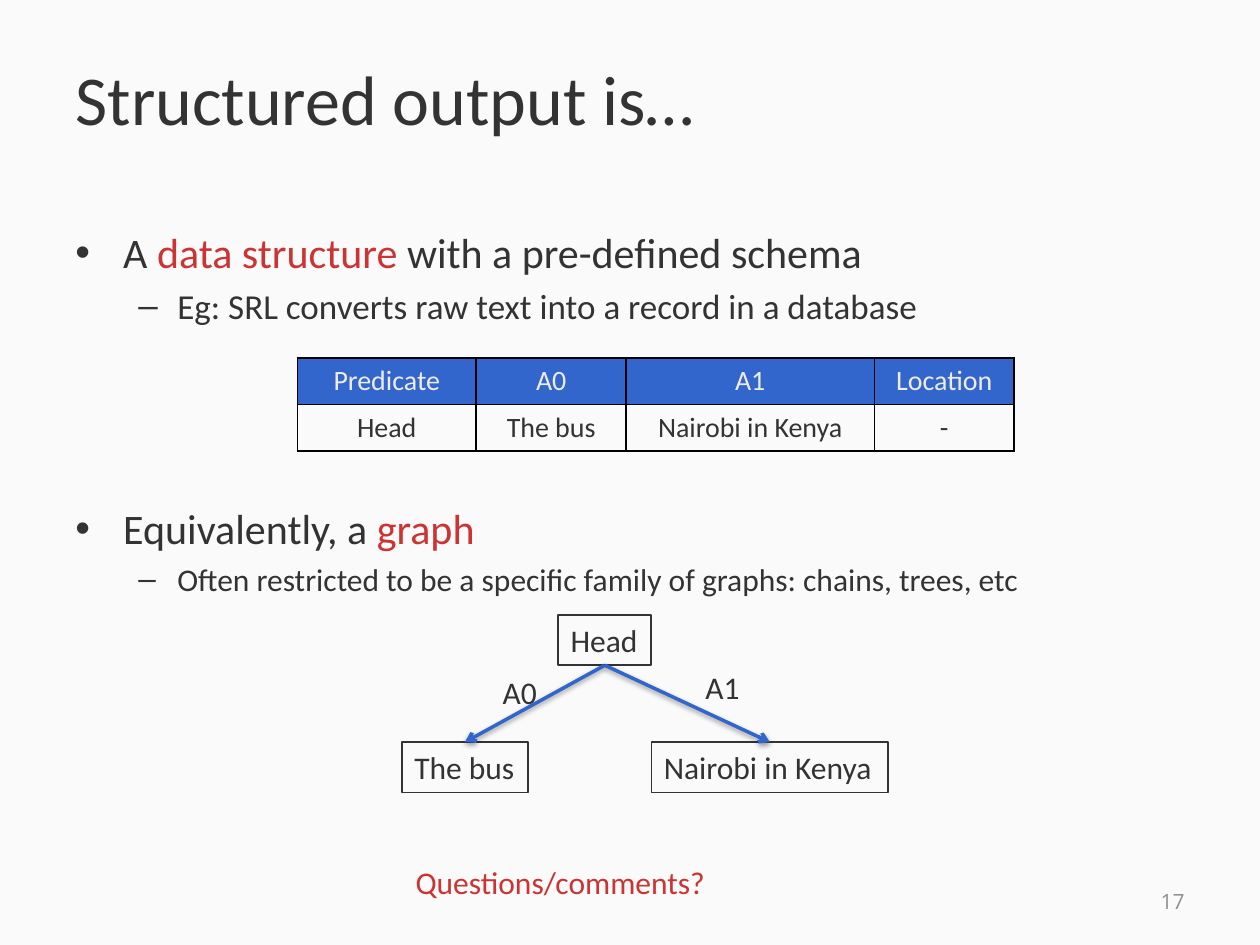
from lxml import etree
from pptx import Presentation, util as u
from pptx.dml import color
from pptx.enum import shapes, text
from pptx.oxml import parse_xml
from pptx.oxml.ns import nsdecls, qn

INK, RED, BLUE, PAPER = "333333", "CC3333", "3366CC", "FAFAFA"
LEFT, MID, RIGHT = text.PP_ALIGN.LEFT, text.PP_ALIGN.CENTER, text.PP_ALIGN.RIGHT


def rgb(code):
    return color.RGBColor.from_string(code)


def write(para, words, size=18, tint=INK, font="Calibri", align=LEFT):
    """Add one run to a paragraph and format it."""
    para.alignment = align
    run = para.add_run()
    run.text = words
    run.font.size = u.Pt(size)
    run.font.name = font
    run.font.bold = False
    run.font.color.rgb = rgb(tint)


class Deck:
    """Holds the style and the current slide."""

    def __init__(self, wide, high):
        self.show = Presentation()
        self.show.slide_width = u.Inches(wide)
        self.show.slide_height = u.Inches(high)
        self.slide = self.show.slides.add_slide(self.show.slide_layouts[5])
        back = self.slide.background.fill
        back.solid()
        back.fore_color.rgb = rgb(PAPER)

    def title(self, words, *area):
        hold = self.slide.shapes.title
        hold.left, hold.top, hold.width, hold.height = map(u.Inches, area)
        hold.text_frame.vertical_anchor = text.MSO_ANCHOR.MIDDLE
        write(hold.text_frame.paragraphs[0], words, size=40)

    def label(self, words, *area, wrap=False, anchor=text.MSO_ANCHOR.TOP, **form):
        frame = self.slide.shapes.add_textbox(*map(u.Inches, area)).text_frame
        frame.word_wrap = wrap
        frame.vertical_anchor = anchor
        write(frame.paragraphs[0], words, **form)

    def bullets(self, items, *area):
        """Each item: level, size, space before, and (words, tint) parts."""
        frame = self.slide.shapes.add_textbox(*map(u.Inches, area)).text_frame
        frame.word_wrap = True
        for num, (level, size, space, parts) in enumerate(items):
            para = frame.add_paragraph() if num else frame.paragraphs[0]
            para.level = level
            para.space_before = u.Pt(space)
            for words, tint in parts:
                write(para, words, size=size, tint=tint)
            mark, left, hang = [("•", 0.38, 0.38), ("–", 0.81, 0.31)][level]
            props = para._p.get_or_add_pPr()
            props.set("marL", str(u.Inches(left)))
            props.set("indent", str(-u.Inches(hang)))
            etree.SubElement(props, qn("a:buFont"), typeface="Arial")
            etree.SubElement(props, qn("a:buChar"), char=mark)

    def table(self, rows, cols, left, top, high):
        grid = self.slide.shapes.add_table(
            len(rows), len(cols), u.Inches(left), u.Inches(top),
            u.Inches(sum(cols)), u.Inches(high * len(rows))).table
        grid.first_row = grid.horz_banding = False
        for col, wide in zip(grid.columns, cols):
            col.width = u.Inches(wide)
        for r, row in enumerate(rows):
            for c, words in enumerate(row):
                cell = grid.cell(r, c)
                write(cell.text_frame.paragraphs[0], words, size=16,
                      tint=INK if r else "EEECE1", align=MID)
                self.border(cell)
                if r:
                    cell.fill.background()
                else:
                    cell.fill.solid()
                    cell.fill.fore_color.rgb = rgb(BLUE)

    def border(self, cell):
        props = cell._tc.get_or_add_tcPr()
        for side in "LRTB":
            props.append(parse_xml(
                f'<a:ln{side} {nsdecls("a")} w="12700"><a:solidFill>'
                f'<a:srgbClr val="000000"/></a:solidFill></a:ln{side}>'))

    def node(self, words, *area):
        box = self.slide.shapes.add_shape(
            shapes.MSO_SHAPE.RECTANGLE, *map(u.Inches, area))
        box.shadow.inherit = False
        box.fill.solid()
        box.fill.fore_color.rgb = rgb(PAPER)
        box.line.color.rgb = rgb(INK)
        box.line.width = u.Pt(1)
        box.text_frame.word_wrap = False
        box.text_frame.vertical_anchor = text.MSO_ANCHOR.TOP
        write(box.text_frame.paragraphs[0], words)
        return box

    def arrow(self, start, end):
        """Join the bottom of one node to the top of another."""
        line = self.slide.shapes.add_connector(
            shapes.MSO_CONNECTOR.STRAIGHT, 0, 0, 0, 0)
        line.begin_connect(start, 2)
        line.end_connect(end, 0)
        line.line.color.rgb = rgb(BLUE)
        line.line.width = u.Pt(2)
        etree.SubElement(line.line._get_or_add_ln(), qn("a:tailEnd"), type="arrow")
        line._element.spPr.append(parse_xml(
            f'<a:effectLst {nsdecls("a")}><a:outerShdw blurRad="{u.Pt(3.1)}" '
            f'dist="{u.Pt(1.6)}" dir="5400000" rotWithShape="0">'
            '<a:srgbClr val="000000"><a:alpha val="38000"/></a:srgbClr>'
            '</a:outerShdw></a:effectLst>'))


def main():
    deck = Deck(10, 7.5)

    # Title and bullets; the wide space leaves room for the table
    deck.title("Structured output is…", 0.5, 0.15, 9, 1.25)
    deck.bullets([
        (0, 24, 4.8, [("A ", INK), ("data structure ", RED),
                      ("with a pre-defined schema", INK)]),
        (1, 20, 4, [("Eg: SRL converts raw text into a record in a database", INK)]),
        (0, 24, 101, [("Equivalently, a ", INK), ("graph", RED)]),
        (1, 18, 3.6, [("Often restricted to be a specific family of graphs: "
                       "chains, trees, etc", INK)]),
    ], 0.5, 1.75, 9, 4.95)

    # Record table
    deck.table([["Predicate", "A0", "A1", "Location"],
                ["Head", "The bus", "Nairobi in Kenya", "-"]],
               [1.42, 1.19, 1.97, 1.11], 2.36, 2.84, 0.37)

    # Graph
    head = deck.node("Head", 4.43, 4.88, 0.74, 0.4)
    bus = deck.node("The bus", 3.19, 5.89, 1, 0.4)
    place = deck.node("Nairobi in Kenya", 5.17, 5.89, 1.88, 0.4)
    for leaf in (bus, place):
        deck.arrow(head, leaf)
    deck.label("A0", 3.89, 5.29, 0.48, 0.4)
    deck.label("A1", 5.5, 5.25, 0.48, 0.4)

    # Closing line and page number
    deck.label("Questions/comments?", 3.2, 6.8, 2.53, 0.4, tint=RED)
    deck.label("17", 7.17, 6.95, 2.33, 0.4, wrap=True, size=12, tint="909090",
               font="Open Sans", align=RIGHT, anchor=text.MSO_ANCHOR.MIDDLE)

    deck.show.save("out.pptx")


if __name__ == "__main__":
    main()
